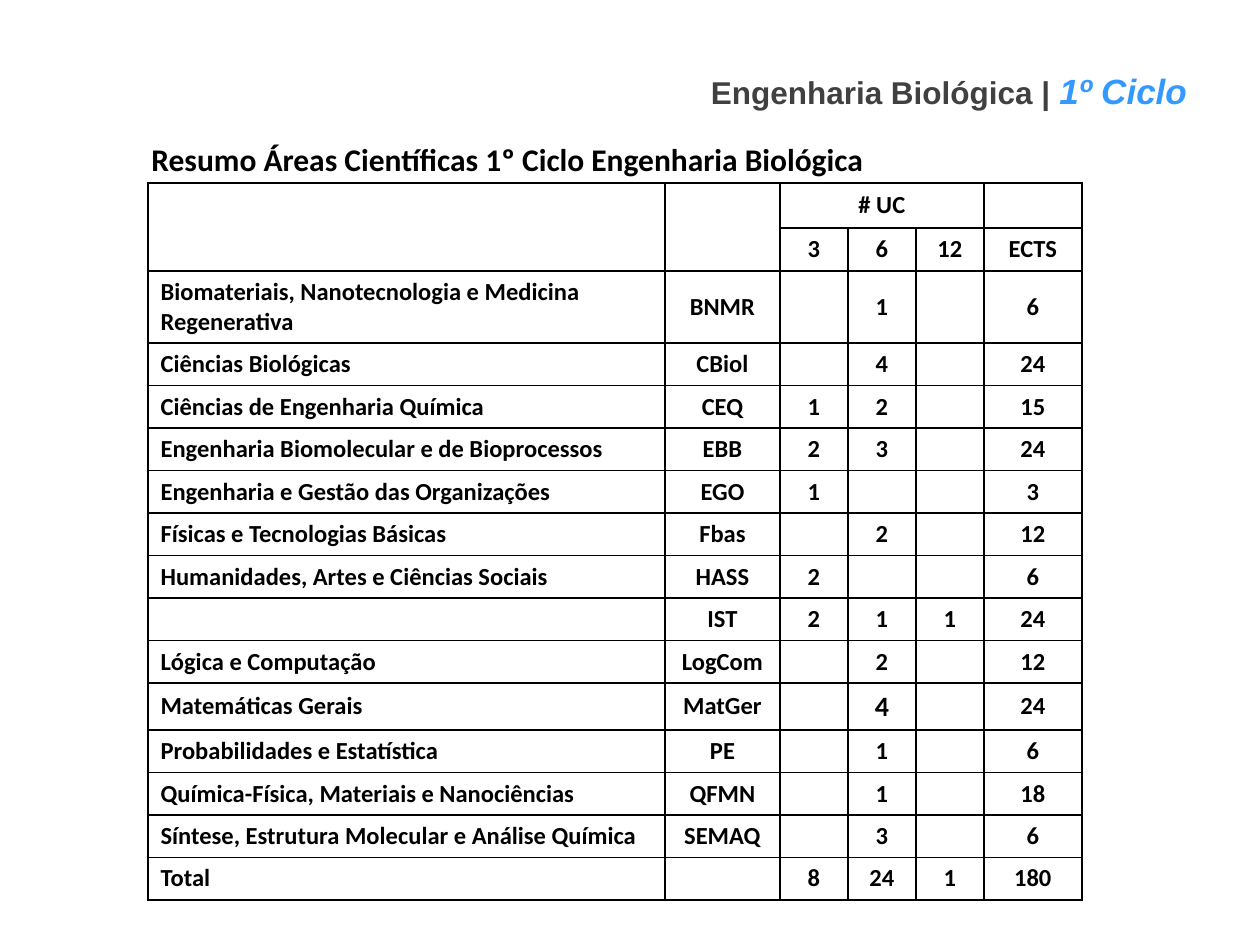
"""Build the summary slide of scientific areas."""
from lxml.etree import SubElement as Sub
from pptx import Presentation
from pptx.dml.color import RGBColor as RGB
from pptx.enum.text import MSO_ANCHOR as Anchor, MSO_AUTO_SIZE as Auto, PP_ALIGN as Align
from pptx.oxml.ns import qn
from pptx.util import Emu, Pt

TITLE = [("Engenharia Biológica | ", "lead"), ("1º Ciclo", "cycle")]
CAPTION = [("Resumo Áreas Científicas 1º Ciclo Engenharia Biológica", "caption")]
HEAD = [("", "", "# UC", "", "", ""), ("", "", "3", "6", "12", "ECTS")]
AREAS = [
    ("Biomateriais, Nanotecnologia e Medicina Regenerativa", "BNMR", "", "1", "", "6"),
    ("Ciências Biológicas", "CBiol", "", "4", "", "24"),
    ("Ciências de Engenharia Química", "CEQ", "1", "2", "", "15"),
    ("Engenharia Biomolecular e de Bioprocessos", "EBB", "2", "3", "", "24"),
    ("Engenharia e Gestão das Organizações", "EGO", "1", "", "", "3"),
    ("Físicas e Tecnologias Básicas", "Fbas", "", "2", "", "12"),
    ("Humanidades, Artes e Ciências Sociais", "HASS", "2", "", "", "6"),
    ("", "IST", "2", "1", "1", "24"),
    ("Lógica e Computação", "LogCom", "", "2", "", "12"),
    ("Matemáticas Gerais", "MatGer", "", "4", "", "24"),
    ("Probabilidades e Estatística", "PE", "", "1", "", "6"),
    ("Química-Física, Materiais e Nanociências", "QFMN", "", "1", "", "18"),
    ("Síntese, Estrutura Molecular e Análise Química", "SEMAQ", "", "3", "", "6"),
    ("Total", "", "8", "24", "1", "180"),
]
ROWS = HEAD + AREAS
SPANS = [((0, 0), (1, 0)), ((0, 1), (1, 1)), ((0, 2), (0, 4))]
LARGE = (11, 3)

THEME = {
    "lead": dict(name="Arial", size=Pt(18), bold=True, italic=False, color="404040"),
    "cycle": dict(name="Arial", size=Pt(20), bold=True, italic=True, color="3399FF"),
    "caption": dict(name="Calibri", size=Pt(18), bold=True, color="000000"),
    "cell": dict(name="Calibri", size=Pt(14), bold=True, color="000000"),
    "large": dict(name="Calibri", size=Pt(16), bold=True, color="000000"),
    "rule": ("000000", Pt(1)),
}
COLS = [517, 115, 68, 68, 68, 98]
TALL = {0: 45, 1: 43, 2: 72, 11: 47}
ROW = 42


def px(num):
    return Emu(round(num * 914400 / 126))


def write(para, parts, align):
    para.alignment = align
    for text, key in parts:
        run = para.add_run()
        run.text = text
        for attr, val in THEME[key].items():
            if attr == "color":
                run.font.color.rgb = RGB.from_string(val)
            else:
                setattr(run.font, attr, val)


def place(shape, box, parts, align):
    for attr, val in zip(("left", "top", "width", "height"), box):
        setattr(shape, attr, px(val))
    frame = shape.text_frame
    form = dict(word_wrap=True, auto_size=Auto.NONE, vertical_anchor=Anchor.MIDDLE)
    for attr, val in form.items():
        setattr(frame, attr, val)
    para = frame.paragraphs[0]
    para.line_spacing = 1.5
    write(para, parts, align)


def border(cell):
    color, width = THEME["rule"]
    props = cell._tc.get_or_add_tcPr()
    for side in ("a:lnL", "a:lnR", "a:lnT", "a:lnB"):
        line = Sub(props, qn(side), w=str(width))
        Sub(Sub(line, qn("a:solidFill")), qn("a:srgbClr"), val=color)


def fill(cell, text, key, align):
    cell.vertical_anchor = Anchor.MIDDLE
    para = cell.text_frame.paragraphs[0]
    write(para, [(text, key)] if text else [], align)
    if not text:
        size = round(THEME[key]["size"].pt * 100)
        Sub(para._p, qn("a:endParaRPr"), sz=str(size), b="1")
    border(cell)
    cell.fill.background()


def grid(slide):
    highs = [TALL.get(i, ROW) for i in range(len(ROWS))]
    box = [px(n) for n in (148, 183, sum(COLS), sum(highs))]
    table = slide.shapes.add_table(len(ROWS), len(COLS), *box).table
    table.first_row = table.horz_banding = False
    for col, wide in zip(table.columns, COLS):
        col.width = px(wide)
    for row, high in zip(table.rows, highs):
        row.height = px(high)
    for r, row in enumerate(ROWS):
        for c, text in enumerate(row):
            key = "large" if (r, c) == LARGE else "cell"
            fill(table.cell(r, c), text, key, Align.CENTER if c else Align.LEFT)
    for start, end in SPANS:
        table.cell(*start).merge(table.cell(*end))


def main():
    deck = Presentation()
    deck.slide_width, deck.slide_height = px(1260), px(945)
    slide = deck.slides.add_slide(deck.slide_layouts[5])
    place(slide.shapes.title, (638, 37, 622, 86), TITLE, Align.CENTER)
    grid(slide)
    note = slide.shapes.add_textbox(0, 0, 0, 0)
    place(note, (139, 106, 862, 86), CAPTION, Align.LEFT)
    deck.save("out.pptx")


if __name__ == "__main__":
    main()
